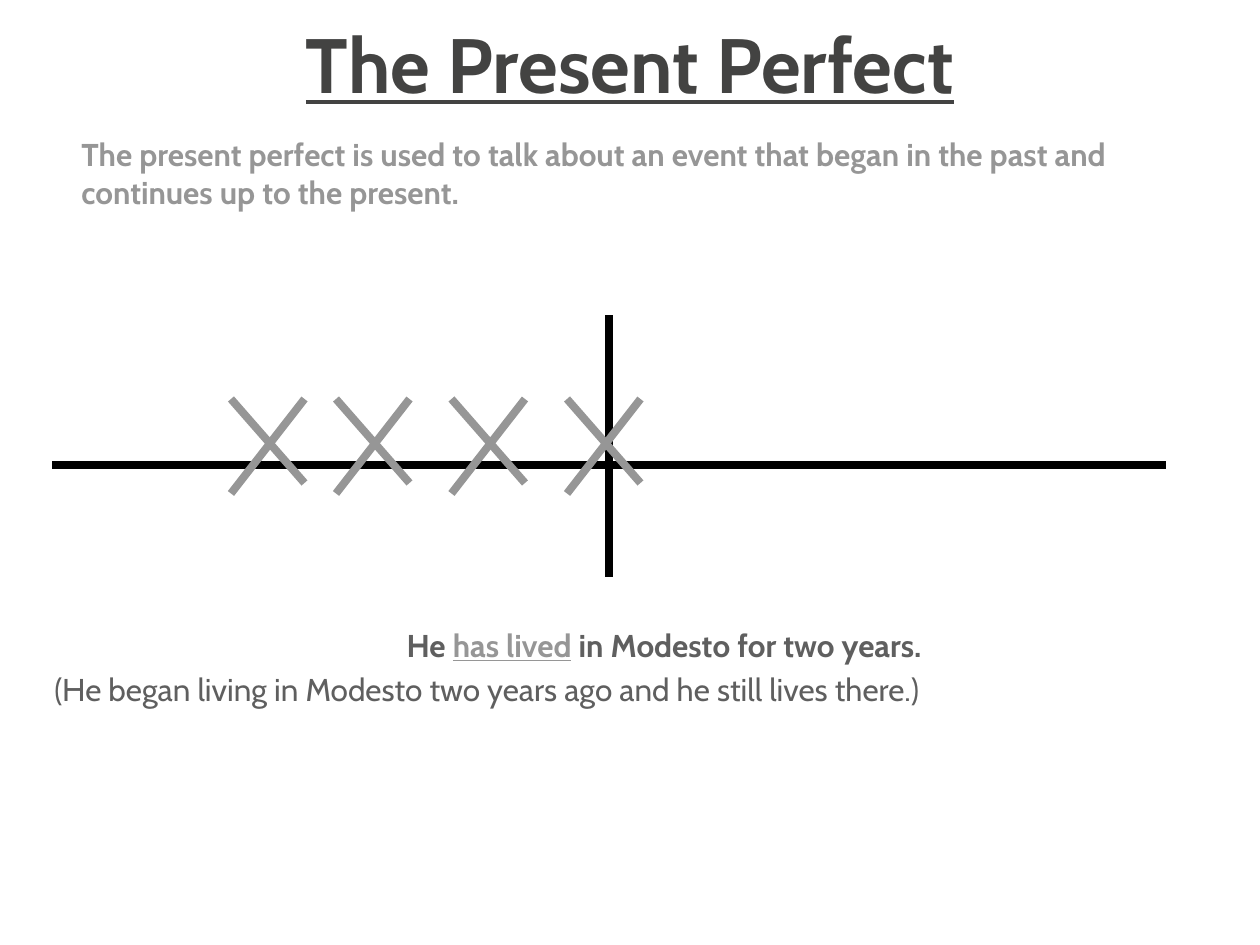
from lxml.etree import SubElement
from pptx import Presentation
from pptx.dml.color import RGBColor
from pptx.enum.shapes import MSO_CONNECTOR
from pptx.enum.text import MSO_ANCHOR, PP_ALIGN
from pptx.oxml.ns import qn
from pptx.util import Inches, Pt

BLACK = RGBColor(0x00, 0x00, 0x00)
CHARCOAL = RGBColor(0x43, 0x43, 0x42)
DARK_GRAY = RGBColor(0x5F, 0x5F, 0x5F)
LIGHT_GRAY = RGBColor(0x96, 0x96, 0x96)

prs = Presentation()
prs.slide_width, prs.slide_height = Inches(10), Inches(7.5)
s = prs.slides.add_slide(prs.slide_layouts[6])
col, row = prs.slide_width / 120, prs.slide_height / 90


def add_text(x, y, w, h, paragraphs):
    sp = s.shapes.add_textbox(int(x * col), int(y * row), int(w * col), int(h * row))
    tf = sp.text_frame
    tf.word_wrap = True
    for i, runs in enumerate(paragraphs):
        p = tf.paragraphs[0] if i == 0 else tf.add_paragraph()
        for text, size, color, bold, underline in runs:
            r = p.add_run()
            r.text = text
            r.font.name = "Cabin"
            r.font.size = Pt(size)
            r.font.color.rgb = color
            r.font.bold = bold
            r.font.underline = underline
    return tf


def add_line(x1, y1, x2, y2, color):
    line = s.shapes.add_connector(
        MSO_CONNECTOR.STRAIGHT, int(x1 * col), int(y1 * row), int(x2 * col), int(y2 * row))
    line.line.color.rgb = color
    line.line.width = Pt(4.5)
    SubElement(line._element.spPr, qn("a:effectLst"))


title = add_text(2, 1, 116, 10, [[("The Present Perfect", 44, CHARCOAL, True, True)]])
title.vertical_anchor = MSO_ANCHOR.BOTTOM
title.paragraphs[0].alignment = PP_ALIGN.CENTER

usage = add_text(2, 12.3, 114, 21, [[
    ("The present perfect is used to talk about an event that began in the past "
     "and continues up to the present.", 18, LIGHT_GRAY, True, False)]])
usage.margin_left = Inches(0.48)

example = add_text(4, 59, 118.5, 12, [
    [("He ", 18, DARK_GRAY, True, False),
     ("has lived", 18, LIGHT_GRAY, True, True),
     (" in Modesto for two years.", 18, DARK_GRAY, True, False)],
    [("(He began living in Modesto two years ago and he still lives there.)",
      18, DARK_GRAY, False, False)]])
example.paragraphs[0].alignment = PP_ALIGN.CENTER
example.paragraphs[1].space_before = Pt(3.6)

add_line(5, 44.3, 111, 44.3, BLACK)
add_line(58, 30, 58, 55, BLACK)

for x in (22, 32, 43, 54):
    add_line(x, 38, x + 7, 46, LIGHT_GRAY)
    add_line(x + 7, 38, x, 47, LIGHT_GRAY)

prs.save("out.pptx")
